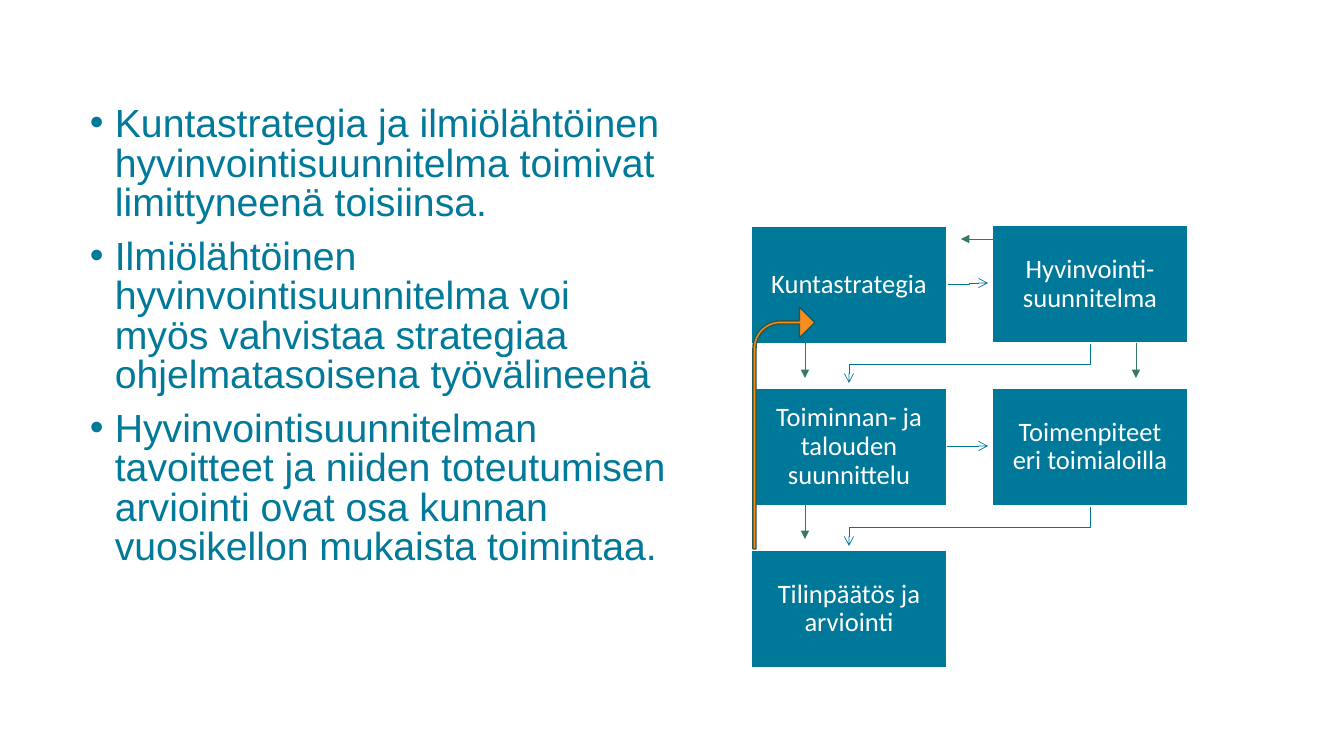
from lxml.etree import SubElement
from pptx import Presentation
from pptx.dml.color import RGBColor
from pptx.enum.shapes import MSO_CONNECTOR as CONNECTOR, MSO_SHAPE as SHAPE
from pptx.enum.text import MSO_ANCHOR as ANCHOR, PP_ALIGN as ALIGN
from pptx.oxml.ns import qn
from pptx.util import Pt

COLORS = {
    "text": "00799A", "box": "007899", "white": "FFFFFF",
    "green": "357769", "orange": "F78D1D", "outline": "27584E",
}
BULLETS = [
    "Kuntastrategia ja ilmiölähtöinen hyvinvointisuunnitelma toimivat "
    "limittyneenä toisiinsa.",
    "Ilmiölähtöinen hyvinvointisuunnitelma voi myös vahvistaa strategiaa "
    "ohjelmatasoisena työvälineenä",
    "Hyvinvointisuunnitelman tavoitteet ja niiden toteutumisen arviointi ovat "
    "osa kunnan vuosikellon mukaista toimintaa.",
]
# label, column, row, vertical nudge
BOXES = [
    ("Kuntastrategia", 0, 0, 0),
    ("Hyvinvointi-suunnitelma", 1, 0, -1),
    ("Toiminnan- ja talouden suunnittelu", 0, 1, 0),
    ("Toimenpiteet eri toimialoilla", 1, 1, 0),
    ("Tilinpäätös ja arviointi", 0, 2, 0),
]
BENT_ROUTES = [
    [(947, 284), (969, 284), (969, 283), (988, 283)],
    [(1090, 342), (1090, 364), (849, 364), (849, 383)],
    [(1090, 504), (1090, 527), (849, 527), (849, 546)],
]
# start x, start y, end x, end y, colour, arrowhead
STRAIGHT_ARROWS = [
    (947, 446, 988, 446, "box", "arrow"),
    (805, 343, 805, 378, "green", "triangle"),
    (805, 504, 805, 539, "green", "triangle"),
    (1136, 343, 1136, 378, "green", "triangle"),
    (998, 239, 961, 239, "green", "triangle"),
]
BOX_LEFT, BOX_TOP, BOX_WIDTH, BOX_HEIGHT = 751, 226, 196, 118
COLUMN_STEP, ROW_STEP, BOX_INSET = 241, 162, 15
PX = 914400 / 100.8


def px(*lengths):
    return [round(length * PX) for length in lengths]


def color(name):
    return RGBColor.from_string(COLORS[name])


def style_line(shape, name, width):
    shape.line.color.rgb = color(name)
    shape.line.width = Pt(width)


def add_arrowhead(shape, kind):
    line = shape.element.spPr.find(qn("a:ln"))
    SubElement(line, qn("a:tailEnd"), type=kind)


def style_font(paragraph, name, size, color_name):
    font = paragraph.font
    font.name, font.size = name, Pt(size)
    font.color.rgb = color(color_name)


def add_bullets(slide):
    frame = slide.shapes.add_textbox(*px(80, 101, 601, 606)).text_frame
    frame.word_wrap = True
    frame.text = "\n".join(BULLETS)
    indent = px(25)[0]
    for index, paragraph in enumerate(frame.paragraphs):
        properties = paragraph._p.get_or_add_pPr()
        properties.set("marL", str(indent))
        properties.set("indent", str(-indent))
        SubElement(properties, qn("a:buFont"), typeface="Arial")
        SubElement(properties, qn("a:buChar"), char="•")
        paragraph.line_spacing = 0.84
        paragraph.space_before = Pt(10 if index else 0)
        style_font(paragraph, "Arial", 28, "text")


def add_bent_route(slide, points):
    builder = slide.shapes.build_freeform(*points[0], scale=PX)
    builder.add_line_segments(points[1:], close=False)
    route = builder.convert_to_shape()
    route.shadow.inherit = False
    route.fill.background()
    style_line(route, "box", 0.5)
    add_arrowhead(route, "arrow")


def add_straight_arrow(slide, x1, y1, x2, y2, color_name, head):
    arrow = slide.shapes.add_connector(CONNECTOR.STRAIGHT, *px(x1, y1, x2, y2))
    style_line(arrow, color_name, 0.5)
    add_arrowhead(arrow, head)
    SubElement(arrow.element.spPr, qn("a:effectLst"))


def add_box(slide, label, column, row, nudge):
    left = BOX_LEFT + column * COLUMN_STEP
    top = BOX_TOP + row * ROW_STEP + nudge
    box = slide.shapes.add_shape(
        SHAPE.RECTANGLE, *px(left, top, BOX_WIDTH, BOX_HEIGHT))
    box.shadow.inherit = False
    box.fill.solid()
    box.fill.fore_color.rgb = color("box")
    style_line(box, "white", 1)
    frame = box.text_frame
    frame.word_wrap = True
    frame.vertical_anchor = ANCHOR.MIDDLE
    inset = px(BOX_INSET)[0]
    frame.margin_left = frame.margin_right = inset
    frame.margin_top = frame.margin_bottom = inset
    frame.text = label
    paragraph = frame.paragraphs[0]
    paragraph.alignment = ALIGN.CENTER
    paragraph.line_spacing = 0.9
    style_font(paragraph, "Calibri", 19, "white")


def add_feedback_arrow(slide):
    arrow = slide.shapes.add_shape(SHAPE.BENT_ARROW, *px(753, 307, 62, 242))
    for index, value in enumerate((0.05, 0.25, 0.25, 0.44)):
        arrow.adjustments[index] = value
    arrow.shadow.inherit = False
    arrow.fill.solid()
    arrow.fill.fore_color.rgb = color("orange")
    style_line(arrow, "outline", 1)


def main():
    presentation = Presentation()
    presentation.slide_width, presentation.slide_height = px(1344, 756)
    slide = presentation.slides.add_slide(presentation.slide_layouts[6])
    add_bullets(slide)
    for points in BENT_ROUTES:
        add_bent_route(slide, points)
    for box in BOXES:
        add_box(slide, *box)
    for arrow in STRAIGHT_ARROWS:
        add_straight_arrow(slide, *arrow)
    add_feedback_arrow(slide)
    presentation.save("out.pptx")


if __name__ == "__main__":
    main()
